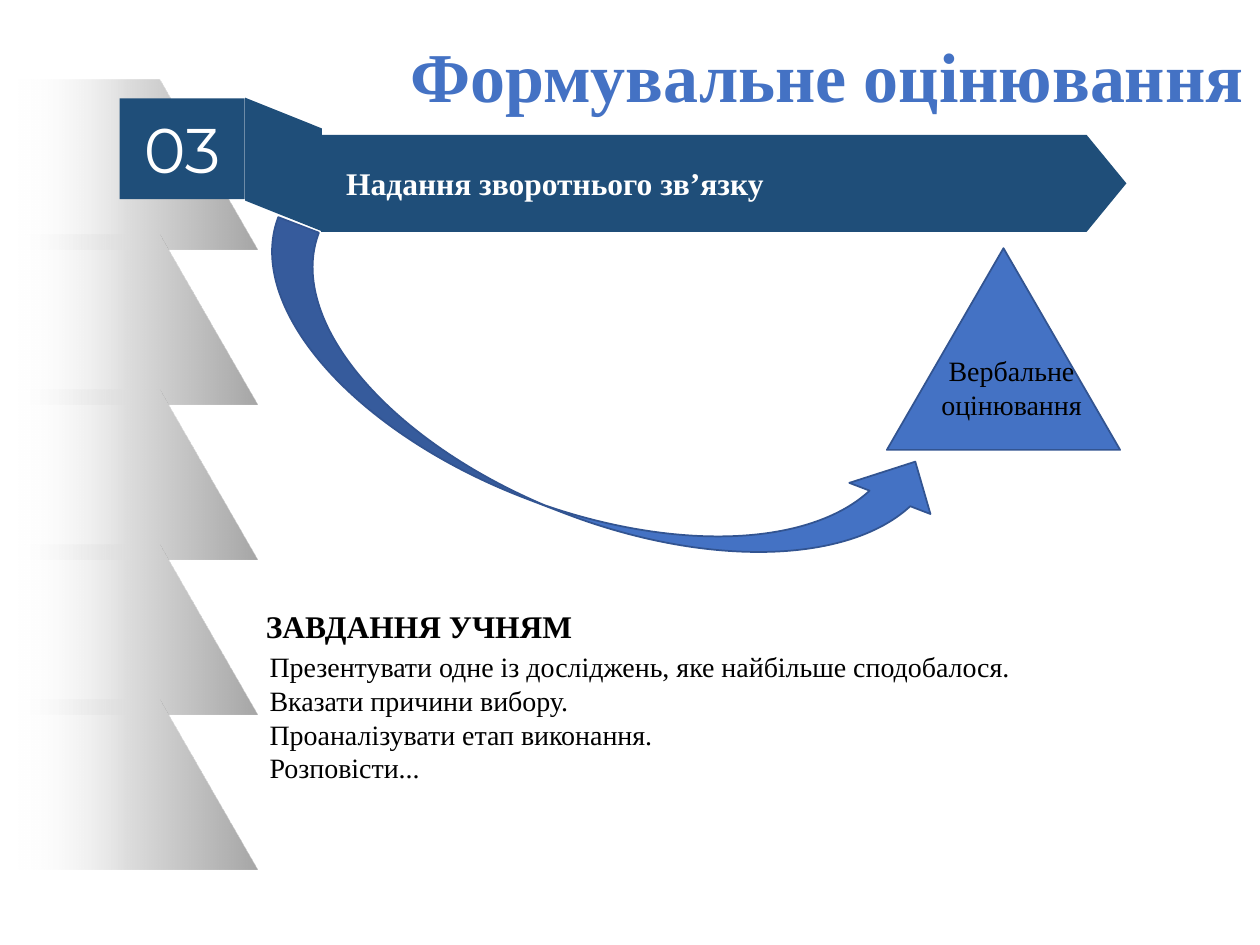
import collections

import pptx
import pptx.dml.color
import pptx.enum.shapes
import pptx.enum.text
import pptx.oxml
import pptx.oxml.ns
import pptx.util

SHAPE = pptx.enum.shapes.MSO_SHAPE
ALIGN = pptx.enum.text.PP_ALIGN
ANCHOR = pptx.enum.text.MSO_ANCHOR
NAVY, BLUE, EDGE, WHITE, BLACK = "1F4E79", "4472C4", "325491", "FFFFFF", "000000"
SERIF = "Times New Roman"
FADE = [(0, "A6A6A6", 100), (50, "DDDDDD", 100), (93, WHITE, 0), (100, WHITE, 0)]


class Box(collections.namedtuple("Box", "left top width height")):
    def share(self, x, y, width, height):
        return Box(
            self.left + self.width * x / 100,
            self.top + self.height * y / 100,
            self.width * width / 100,
            self.height * height / 100,
        )

    def emu(self):
        return [pptx.util.Inches(length) for length in self]


def color(value):
    return pptx.dml.color.RGBColor.from_string(value)


def write(shape, lines, size, ink, align, font=SERIF, bold=False, anchor=ANCHOR.MIDDLE):
    frame = shape.text_frame
    frame.word_wrap = True
    frame.auto_size = pptx.enum.text.MSO_AUTO_SIZE.NONE
    frame.vertical_anchor = anchor
    frame.text = "\n".join(lines)
    for paragraph in frame.paragraphs:
        paragraph.alignment = align
        paragraph.font.name = font
        paragraph.font.size = pptx.util.Pt(size)
        paragraph.font.bold = bold
        paragraph.font.color.rgb = color(ink)
    return frame


def add_text(slide, box, *args, **options):
    return write(slide.shapes.add_textbox(*box.emu()), *args, **options)


def add_figure(slide, kind, box, fill, edge=None):
    figure = slide.shapes.add_shape(kind, *box.emu())
    figure.shadow.inherit = False
    figure.fill.solid()
    figure.fill.fore_color.rgb = color(fill)
    if edge:
        figure.line.color.rgb = color(edge)
        figure.line.width = pptx.util.Pt(1)
    else:
        figure.line.fill.background()
    return figure


def fade_left(shape):
    namespace = pptx.oxml.ns.nsdecls("a")
    stops = "".join(
        f'<a:gs pos="{place * 1000}"><a:srgbClr val="{tone}">'
        f'<a:alpha val="{opacity * 1000}"/></a:srgbClr></a:gs>'
        for place, tone, opacity in FADE
    )
    gradient = pptx.oxml.parse_xml(
        f'<a:gradFill {namespace} rotWithShape="1"><a:gsLst>{stops}</a:gsLst>'
        '<a:lin ang="10800000" scaled="0"/></a:gradFill>'
    )
    shape.fill.background()
    properties = shape.element.spPr
    properties.replace(properties.find(pptx.oxml.ns.qn("a:noFill")), gradient)


def add_ribbons(slide, box, count=5):
    for index in range(count):
        left, top, width, height = box.share(0, 19.62 * index, 100, 21.53).emu()
        builder = slide.shapes.build_freeform(left, top)
        builder.add_line_segments(
            [
                (left + round(width * 0.62), top),
                (left + width, top + height),
                (left, top + height),
            ],
            close=True,
        )
        ribbon = builder.convert_to_shape()
        ribbon.shadow.inherit = False
        ribbon.line.fill.background()
        fade_left(ribbon)


def add_header(slide, box):
    banner = add_figure(slide, SHAPE.PENTAGON, box.share(20, 27.1, 80, 72), NAVY)
    banner.adjustments[0] = 0.41
    frame = write(banner, ["Надання зворотнього зв’язку"], 18, WHITE, ALIGN.JUSTIFY, bold=True)
    frame.margin_left = frame.margin_right = pptx.util.Inches(0.2)

    badge = add_figure(slide, SHAPE.RECTANGLE, box.share(0, 0, 12.4, 74.8), NAVY)
    write(badge, ["03"], 36, WHITE, ALIGN.CENTER, font="Montserrat")

    fold = add_figure(slide, SHAPE.PARALLELOGRAM, box.share(9.64, 20.6, 13.27, 57), NAVY)
    fold.adjustments[0] = 0.4
    fold.rotation = 270


def add_feedback(slide, box):
    add_figure(slide, SHAPE.ISOSCELES_TRIANGLE, box.share(74, 0, 26, 75.5), BLUE, EDGE)
    add_text(
        slide, box.share(75.8, 37.3, 24.2, 30.2), ["Вербальне", "оцінювання"],
        16, BLACK, ALIGN.CENTER, anchor=ANCHOR.TOP,
    )
    arrow = add_figure(slide, SHAPE.CURVED_UP_ARROW, box.share(0, 34.9, 80.9, 65.1), BLUE, EDGE)
    arrow.rotation = 21


def add_tasks(slide, box):
    heading = slide.shapes.title
    heading.left, heading.top, heading.width, heading.height = box.share(0, 0, 34.3, 41.6).emu()
    frame = write(heading, ["ЗАВДАННЯ УЧНЯМ"], 18, BLACK, ALIGN.LEFT, bold=True)
    frame.paragraphs[0].line_spacing = 0.9
    tasks = [
        "Презентувати одне із досліджень, яке найбільше сподобалося.",
        "Вказати причини вибору.",
        "Проаналізувати етап виконання.",
        "Розповісти...",
    ]
    add_text(
        slide, box.share(0.4, 26.7, 99.6, 73.3), tasks,
        16, BLACK, ALIGN.LEFT, anchor=ANCHOR.TOP,
    )


def main():
    deck = pptx.Presentation()
    deck.slide_width = pptx.util.Inches(10)
    deck.slide_height = pptx.util.Inches(7.5)
    slide = deck.slides.add_slide(deck.slide_layouts[5])

    add_ribbons(slide, Box(0, 0.63, 2.04, 6.27))
    add_header(slide, Box(0.95, 0.78, 7.99, 1.07))
    add_text(
        slide, Box(0.97, 0.2, 9, 0.79), ["Формувальне оцінювання"],
        40, BLUE, ALIGN.RIGHT, bold=True,
    )
    add_feedback(slide, Box(1.77, 1.97, 7.12, 2.12))
    add_tasks(slide, Box(2.01, 4.57, 7.96, 2.02))
    deck.save("out.pptx")


if __name__ == "__main__":
    main()
